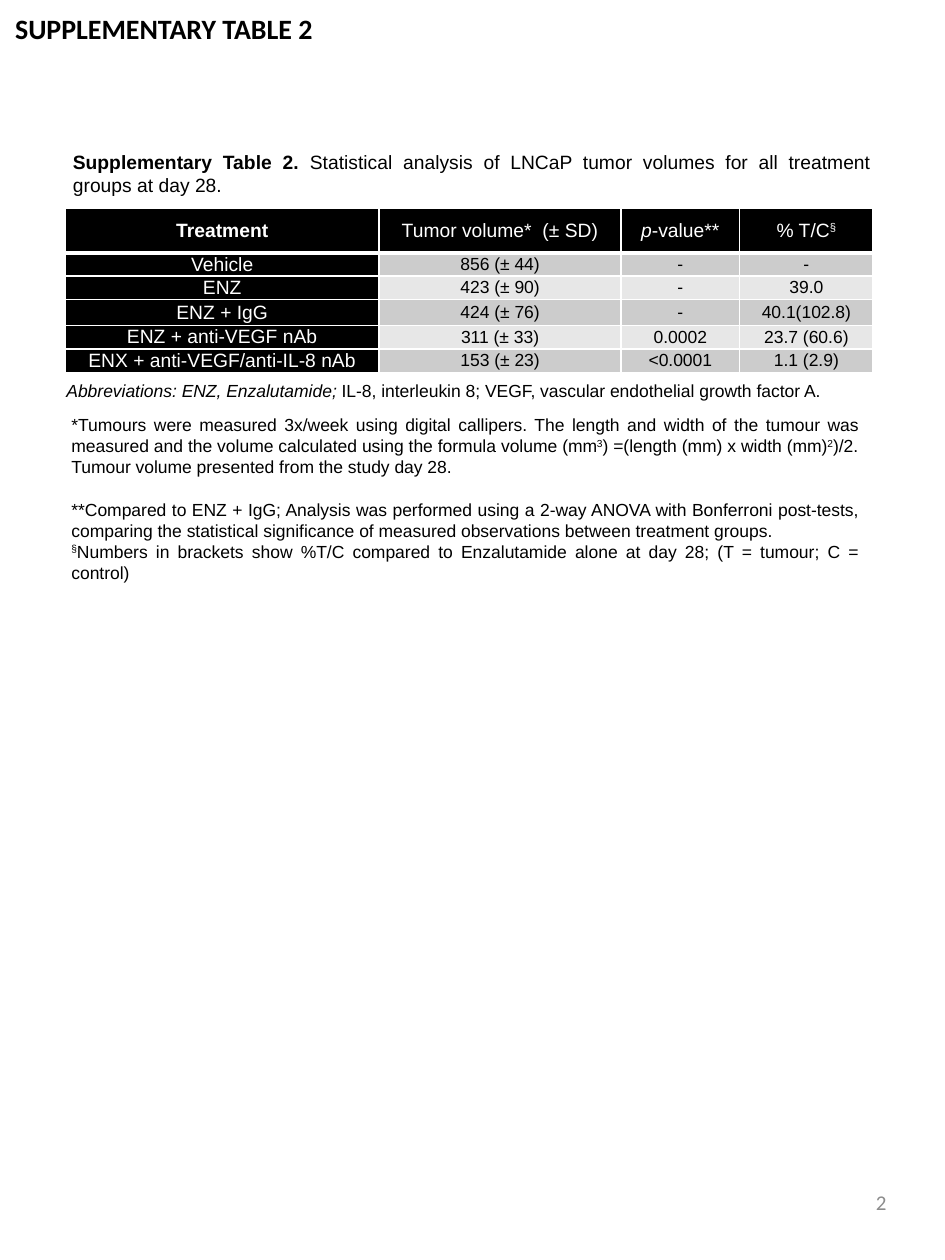
import pptx
import pptx.dml.color
import pptx.enum.text
import pptx.oxml
import pptx.oxml.ns
import pptx.util
from pptx.util import Cm

ALIGN = pptx.enum.text.PP_ALIGN
ANCHOR = pptx.enum.text.MSO_ANCHOR


def color(value):
    return pptx.dml.color.RGBColor.from_string(value)


def run(text, **fmt):
    return text, fmt


class Page:
    font = "Arial"
    black, white, gray = "000000", "FFFFFF", "8C8C8C"
    bands = ("CCCCCC", "E7E7E7")

    def __init__(self, prs):
        self.s = prs.slides.add_slide(prs.slide_layouts[5])

    def place(self, sp, box):
        sp.left, sp.top, sp.width, sp.height = (Cm(v) for v in box)

    def add_runs(self, p, runs, align, **style):
        p.alignment = align
        for text, fmt in runs:
            f = {"size": 10, "color": self.black, "font": self.font, **style, **fmt}
            r = p.add_run()
            r.text = text
            r.font.name = f["font"]
            r.font.size = pptx.util.Pt(f["size"])
            r.font.bold = f.get("bold", False)
            r.font.italic = f.get("italic", False)
            r.font.color.rgb = color(f["color"])
            if f.get("sup"):
                r._r.get_or_add_rPr().set("baseline", "30000")

    def title(self, box, text):
        sp = self.s.shapes.title
        self.place(sp, box)
        tf = sp.text_frame
        tf.word_wrap = False
        tf.auto_size = pptx.enum.text.MSO_AUTO_SIZE.NONE
        tf.vertical_anchor = ANCHOR.TOP
        self.add_runs(tf.paragraphs[0], [run(text)], ALIGN.LEFT, size=16, bold=True, font="Calibri")

    def text(self, box, paragraphs, align=ALIGN.JUSTIFY, anchor=ANCHOR.TOP, gaps=(), **style):
        sp = self.s.shapes.add_textbox(*(Cm(v) for v in box))
        tf = sp.text_frame
        tf.word_wrap = True
        tf.vertical_anchor = anchor
        for i, runs in enumerate(paragraphs):
            p = tf.paragraphs[0] if i == 0 else tf.add_paragraph()
            if i in gaps:
                p.space_before = pptx.util.Pt(12)
            self.add_runs(p, runs, align, **style)

    def borders(self, cell, **widths):
        tc_pr = cell._tc.get_or_add_tcPr()
        for side in "LRTB":
            width = pptx.util.Pt(widths.get(side, 1))
            tc_pr.append(pptx.oxml.parse_xml(
                f'<a:ln{side} {pptx.oxml.ns.nsdecls("a")} w="{width}">'
                f'<a:solidFill><a:srgbClr val="{self.white}"/></a:solidFill></a:ln{side}>'))

    def cell(self, cell, runs, fill, **style):
        cell.margin_left = cell.margin_right = Cm(0.18)
        cell.margin_top = cell.margin_bottom = 0
        cell.vertical_anchor = ANCHOR.MIDDLE
        cell.fill.solid()
        cell.fill.fore_color.rgb = color(fill)
        self.add_runs(cell.text_frame.paragraphs[0], runs, ALIGN.CENTER, **style)

    def table(self, left, top, widths, heights, header, rows):
        box = (left, top, sum(widths), sum(heights))
        tbl = self.s.shapes.add_table(len(heights), len(widths), *(Cm(v) for v in box)).table
        tbl.horz_banding = False
        for col, w in zip(tbl.columns, widths):
            col.width = Cm(w)
        for row, h in zip(tbl.rows, heights):
            row.height = Cm(h)
        for i, values in enumerate([header] + [[[run(v)] for v in row] for row in rows]):
            for j, runs in enumerate(values):
                cell = tbl.cell(i, j)
                self.borders(cell, **({"B": 3} if i == 0 else {"T": 3} if i == 1 else {}))
                if i == 0 or j == 0:
                    self.cell(cell, runs, self.black, size=11, color=self.white)
                else:
                    self.cell(cell, runs, self.bands[(i - 1) % 2])


def main():
    prs = pptx.Presentation()
    prs.slide_width, prs.slide_height = Cm(19.05), Cm(25.4)
    page = Page(prs)

    page.title((0.05, 0.1, 6.58, 0.94), "SUPPLEMENTARY TABLE 2")
    page.text((1.09, 7.54, 16.38, 0.69), [[
        run("Abbreviations: ENZ, Enzalutamide; ", italic=True),
        run("IL-8, interleukin 8; VEGF, vascular endothelial growth factor A."),
    ]])
    page.text((1.22, 2.9, 16.59, 1.19), [[
        run("Supplementary Table 2. ", bold=True),
        run("Statistical analysis of LNCaP tumor volumes for all treatment groups at day 28."),
    ]], size=11)
    page.text((1.19, 8.23, 16.36, 3.68), [
        [run("*Tumours were measured 3x/week using digital callipers. The length and width of "
             "the tumour was measured and the volume calculated using the formula volume (mm"),
         run("3", sup=True),
         run(") =(length (mm) x width (mm)"),
         run("2", sup=True),
         run(")/2. Tumour volume presented from the study day 28.")],
        [run("**Compared to ENZ + IgG; Analysis was performed using a 2-way ANOVA with "
             "Bonferroni post-tests, comparing the statistical significance of measured "
             "observations between treatment groups. ")],
        [run("§", sup=True),
         run("Numbers in brackets show %T/C compared to Enzalutamide alone at day 28; "
             "(T = tumour; C = control)")],
    ], gaps=(1,))

    header = [
        [run("Treatment", bold=True)],
        [run("Tumor volume*  (± SD)")],
        [run("p", italic=True), run("-value**")],
        [run("% T/C"), run("§", sup=True)],
    ]
    rows = [
        ("Vehicle", "856 (± 44)", "-", "-"),
        ("ENZ", "423 (± 90)", "-", "39.0"),
        ("ENZ + IgG", "424 (± 76)", "-", "40.1(102.8)"),
        ("ENZ + anti-VEGF nAb", "311 (± 33)", "0.0002", "23.7 (60.6)"),
        ("ENX + anti-VEGF/anti-IL-8 nAb", "153 (± 23)", "<0.0001", "1.1 (2.9)"),
    ]
    page.table(1.32, 4.19, (6.32, 4.88, 2.39, 2.69),
               (0.91, 0.46, 0.46, 0.53, 0.46, 0.48), header, rows)
    page.text((13.67, 23.55, 4.45, 1.35), [[run("2")]], align=ALIGN.RIGHT,
              anchor=ANCHOR.MIDDLE, size=12, color=page.gray, font="Calibri")
    prs.save("out.pptx")


if __name__ == "__main__":
    main()
